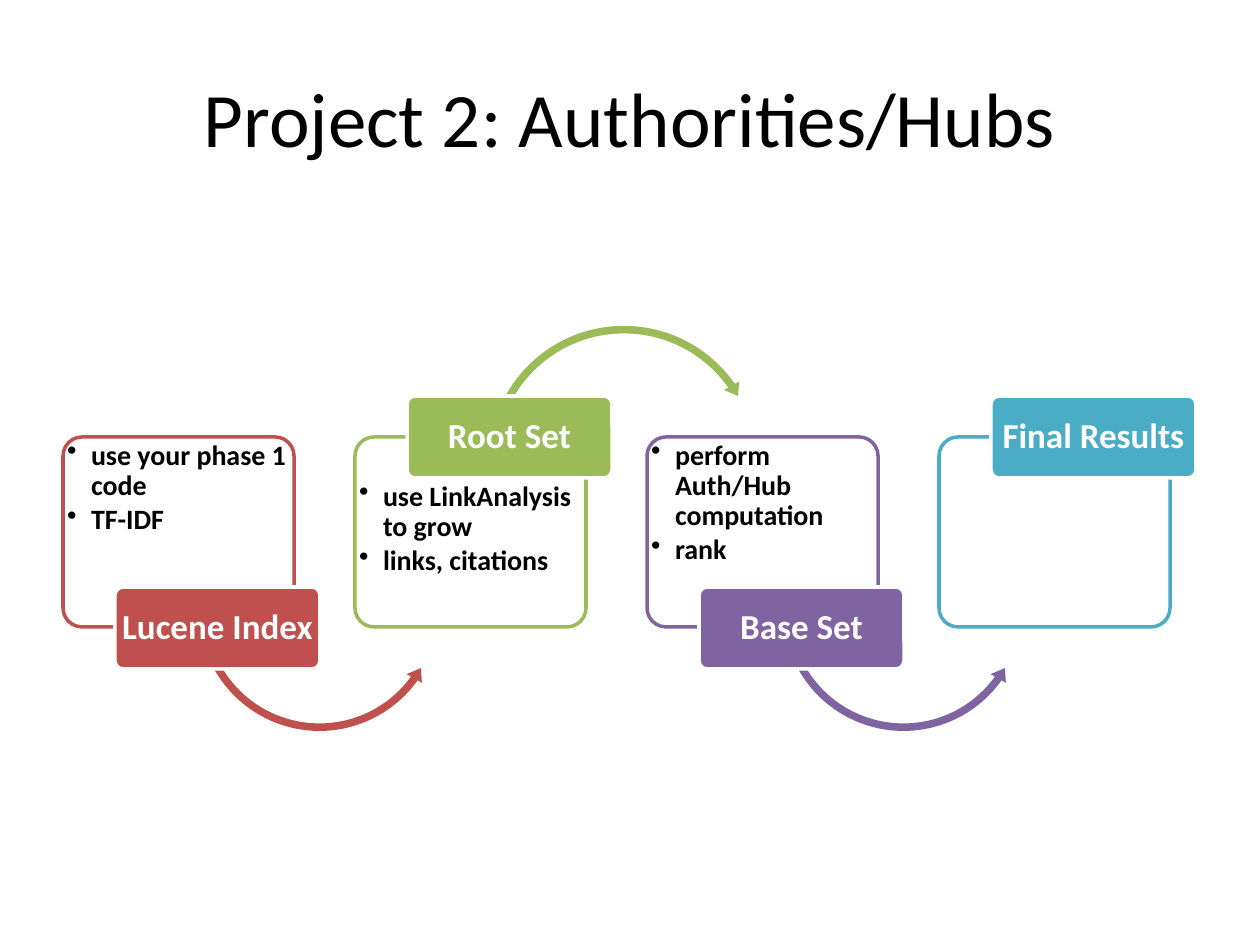
from dataclasses import dataclass

import lxml.etree
import pptx
import pptx.dml.color
import pptx.enum.shapes
import pptx.enum.text
import pptx.oxml.ns
import pptx.util

PX = 914400 / 126
FONT = "Calibri"
COLOURS = {
    "black": "000000",
    "white": "FFFFFF",
    "red": "C0504D",
    "green": "9BBB59",
    "purple": "8064A2",
    "teal": "4BACC6",
}
SHAPES = pptx.enum.shapes.MSO_SHAPE
CENTER = pptx.enum.text.PP_ALIGN.CENTER
MIDDLE = pptx.enum.text.MSO_ANCHOR.MIDDLE

STEP_LEFT, STEP_PITCH = 63, 292
CARD_TOP, CARD_WIDTH, CARD_HEIGHT = 437, 231, 190
LABEL_OFFSET, LABEL_WIDTH, LABEL_HEIGHT = 52, 205, 82
LABEL_TOP_HIGH, LABEL_TOP_LOW = 396, 587
BODY_HEIGHT = 150
BULLET_INDENT = 24


@dataclass(frozen=True)
class Arrow:
    kind: pptx.enum.shapes.MSO_SHAPE
    offset: int
    top: int
    size: int
    adjustments: tuple[float, ...]


@dataclass(frozen=True)
class Step:
    label: str
    colour: str
    label_high: bool
    bullets: tuple[str, ...] = ()
    arrow: Arrow | None = None


ARROW_BELOW = Arrow(SHAPES.LEFT_CIRCULAR_ARROW, 131, 485, 251,
                    (0.03, 3.637, 21.392, 90.245, 0.035))
ARROW_ABOVE = Arrow(SHAPES.CIRCULAR_ARROW, 129, 321, 280,
                    (0.027, 3.23, 195.015, 125.755, 0.031))
STEPS = (
    Step("Lucene Index", "red", False, ("use your phase 1 code", "TF-IDF"), ARROW_BELOW),
    Step("Root Set", "green", True, ("use LinkAnalysis to grow", "links, citations"), ARROW_ABOVE),
    Step("Base Set", "purple", False, ("perform Auth/Hub computation", "rank"), ARROW_BELOW),
    Step("Final Results", "teal", True),
)


def px(length: int) -> int:
    return round(length * PX)


def rgb(name: str) -> pptx.dml.color.RGBColor:
    return pptx.dml.color.RGBColor.from_string(COLOURS[name])


def add_span(para, text: str, size: int, colour: str, bold: bool) -> None:
    span = para.add_run()
    span.text = text
    span.font.name = FONT
    span.font.size = pptx.util.Pt(size)
    span.font.bold = bold
    span.font.color.rgb = rgb(colour)


def set_insets(frame, horizontal: int, vertical: int) -> None:
    frame.margin_left = frame.margin_right = px(horizontal)
    frame.margin_top = frame.margin_bottom = px(vertical)


def add_filled(page, kind, left: int, top: int, width: int, height: int,
               fill: str, line: str | None, adjustments: tuple[float, ...]):
    shape = page.shapes.add_shape(kind, px(left), px(top), px(width), px(height))
    shape.shadow.inherit = False
    shape.fill.solid()
    shape.fill.fore_color.rgb = rgb(fill)
    if line:
        shape.line.color.rgb = rgb(line)
        shape.line.width = pptx.util.Pt(2)
    else:
        shape.line.fill.background()
    for index, value in enumerate(adjustments):
        shape.adjustments[index] = value
    return shape


def add_card(page, left: int, colour: str) -> None:
    card = add_filled(page, SHAPES.ROUNDED_RECTANGLE, left, CARD_TOP, CARD_WIDTH,
                      CARD_HEIGHT, "white", colour, (0.1,))
    qn = pptx.oxml.ns.qn
    fill_colour = card.fill._xPr.find(qn("a:solidFill")).find(qn("a:srgbClr"))
    lxml.etree.SubElement(fill_colour, qn("a:alpha"), val="90000")


def add_bullets(page, left: int, top: int, bullets: tuple[str, ...]) -> None:
    box = page.shapes.add_textbox(px(left), px(top), px(CARD_WIDTH), px(BODY_HEIGHT))
    frame = box.text_frame
    frame.word_wrap = True
    set_insets(frame, 4, 4)
    for index, text in enumerate(bullets):
        para = frame.add_paragraph() if index else frame.paragraphs[0]
        para.level = 1
        para.line_spacing = 0.9
        para.space_after = pptx.util.Pt(2.4)
        properties = para._p.get_or_add_pPr()
        properties.set("marL", str(px(BULLET_INDENT)))
        properties.set("indent", str(-px(BULLET_INDENT)))
        lxml.etree.SubElement(properties, pptx.oxml.ns.qn("a:buChar"), char="•")
        add_span(para, text, 16, "black", True)


def add_label(page, left: int, top: int, text: str, colour: str) -> None:
    label = add_filled(page, SHAPES.ROUNDED_RECTANGLE, left, top, LABEL_WIDTH,
                       LABEL_HEIGHT, colour, "white", (0.1,))
    frame = label.text_frame
    frame.word_wrap = False
    frame.vertical_anchor = MIDDLE
    set_insets(frame, 5, 4)
    para = frame.paragraphs[0]
    para.alignment = CENTER
    para.line_spacing = 0.9
    add_span(para, text, 20, "white", True)


def add_step(page, left: int, step: Step) -> None:
    add_card(page, left, step.colour)
    label_top = LABEL_TOP_HIGH if step.label_high else LABEL_TOP_LOW
    if step.bullets:
        body_top = label_top + LABEL_HEIGHT if step.label_high else CARD_TOP
        add_bullets(page, left, body_top, step.bullets)
    if step.arrow:
        arrow = step.arrow
        add_filled(page, arrow.kind, left + arrow.offset, arrow.top, arrow.size,
                   arrow.size, step.colour, None, arrow.adjustments)
    add_label(page, left + LABEL_OFFSET, label_top, step.label, step.colour)


def add_title(page, text: str) -> None:
    title = page.shapes.title
    title.left, title.top, title.width, title.height = px(63), px(38), px(1134), px(157)
    title.text_frame.vertical_anchor = MIDDLE
    para = title.text_frame.paragraphs[0]
    para.alignment = CENTER
    add_span(para, text, 44, "black", False)


def main() -> None:
    deck = pptx.Presentation()
    deck.slide_width, deck.slide_height = px(1260), px(945)
    page = deck.slides.add_slide(deck.slide_layouts[5])
    add_title(page, "Project 2: Authorities/Hubs")
    for index, step in enumerate(STEPS):
        add_step(page, STEP_LEFT + index * STEP_PITCH, step)
    deck.save("out.pptx")


if __name__ == "__main__":
    main()
